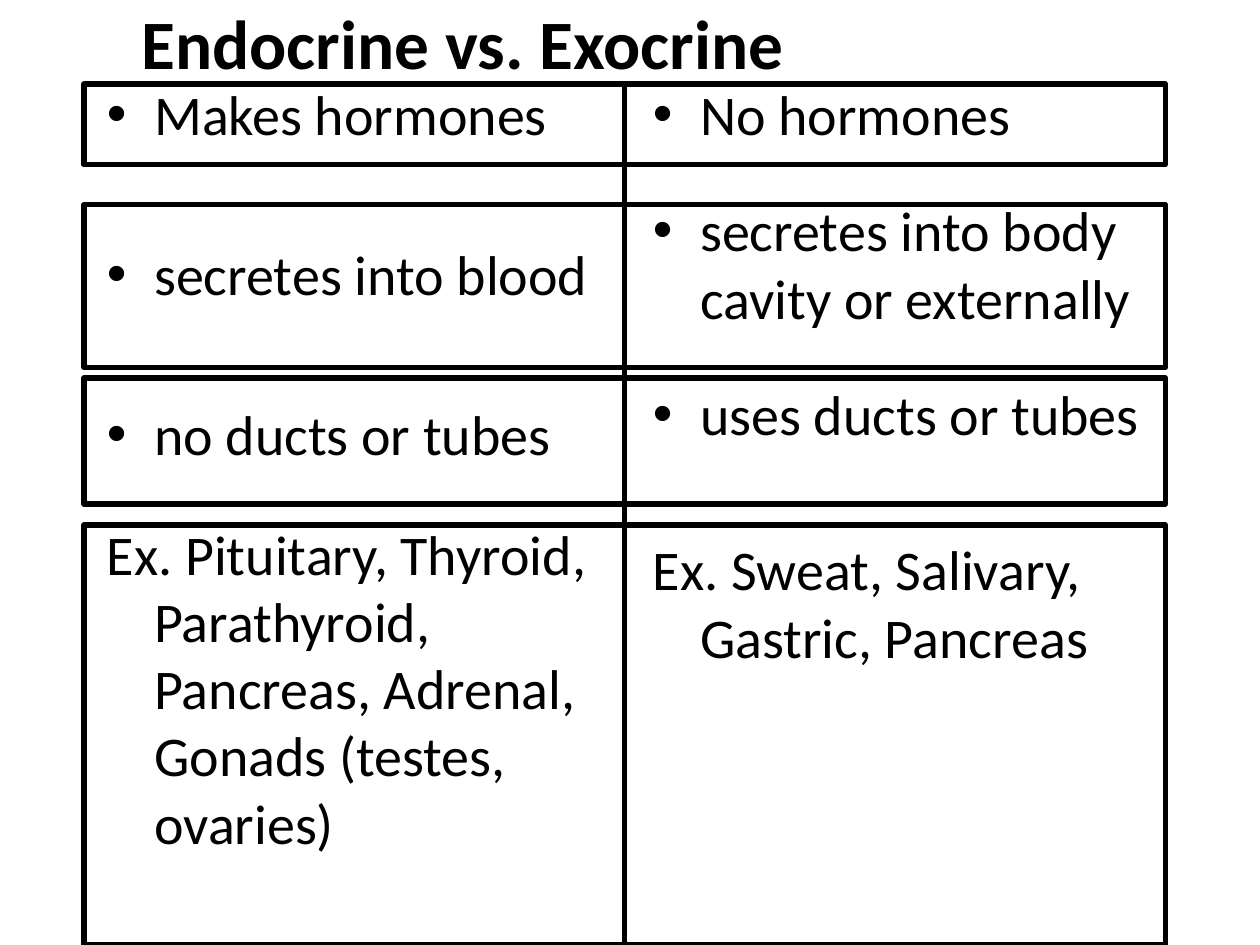
import pptx
import pptx.dml.color
import pptx.enum.shapes
import pptx.enum.text
import pptx.util
from lxml import etree

BLACK = pptx.dml.color.RGBColor(0, 0, 0)
WHITE = pptx.dml.color.RGBColor(255, 255, 255)
FONT = "Calibri"
COLS, ROWS = 120, 90
WIDE, HIGH = pptx.util.Inches(10), pptx.util.Inches(7.5)
Pt = pptx.util.Pt

# Each entry: text, bulleted, space before in points
ENDO = [
    ("Makes hormones", True, 0),
    ("secretes into blood", True, 53),
    ("no ducts or tubes", True, 53),
    ("Ex. Pituitary, Thyroid, Parathyroid, Pancreas, Adrenal, "
     "Gonads (testes, ovaries)", False, 30),
]
EXO = [
    ("No hormones", True, 0),
    ("secretes into body cavity or externally", True, 28),
    ("uses ducts or tubes", True, 28),
    ("Ex. Sweat, Salivary, Gastric, Pancreas", False, 50.5),
]
# Top and height of each row frame, in grid rows
FRAMES = [(8, 7.7), (19.5, 15.5), (36, 12), (50, 40)]
LEFT, SPAN, MID = 8, 103, 59.5


def across(cols):
    return round(WIDE * cols / COLS)


def down(rows):
    return round(HIGH * rows / ROWS)


def place(x, y, w, h):
    return across(x), down(y), across(w), down(h)


def add_text(para, text, size=32, bold=False, before=0):
    para.space_before = Pt(before)
    run = para.add_run()
    run.text = text
    font = run.font
    font.name, font.size, font.bold = FONT, Pt(size), bold
    font.color.rgb = BLACK


def hang(para, bullet):
    """Set a hanging indent, with a round bullet if asked."""
    props = para._p.get_or_add_pPr()
    props.set("marL", str(across(4.5)))
    props.set("indent", str(-across(4.5)))
    ns = pptx.oxml.ns.qn
    if bullet:
        etree.SubElement(props, ns("a:buFont"), typeface="Arial")
        etree.SubElement(props, ns("a:buChar"), char="•")
    else:
        etree.SubElement(props, ns("a:buNone"))


def add_box(slide, x, y, w, h):
    frame = slide.shapes.add_textbox(*place(x, y, w, h)).text_frame
    frame.word_wrap = True
    return frame


def add_title(slide, text):
    frame = add_box(slide, 5.2, 0, 102, 8)
    frame.vertical_anchor = pptx.enum.text.MSO_ANCHOR.MIDDLE
    frame.margin_left = across(8.3)
    add_text(frame.paragraphs[0], text, size=39.6, bold=True)


def add_list(slide, x, items):
    frame = add_box(slide, x, 7, 50, 83)
    for i, (text, bullet, gap) in enumerate(items):
        para = frame.add_paragraph() if i else frame.paragraphs[0]
        add_text(para, text, before=gap)
        hang(para, bullet)


def ink(line):
    line.color.rgb = BLACK
    line.width = Pt(3)


def add_frame(slide, top, high):
    kind = pptx.enum.shapes.MSO_SHAPE.RECTANGLE
    rect = slide.shapes.add_shape(kind, *place(LEFT, top, SPAN, high))
    rect.shadow.inherit = False
    rect.fill.background()
    ink(rect.line)


def add_rule(slide, x, top, end):
    kind = pptx.enum.shapes.MSO_CONNECTOR.STRAIGHT
    rule = slide.shapes.add_connector(
        kind, across(x), down(top), across(x), down(end))
    ink(rule.line)
    etree.SubElement(rule._element.spPr, pptx.oxml.ns.qn("a:effectLst"))


def main():
    deck = pptx.Presentation()
    deck.slide_width, deck.slide_height = WIDE, HIGH
    slide = deck.slides.add_slide(deck.slide_layouts[6])
    slide.background.fill.solid()
    slide.background.fill.fore_color.rgb = WHITE
    add_title(slide, "Endocrine vs. Exocrine")
    for x, items in ((9, ENDO), (61, EXO)):
        add_list(slide, x, items)
    for top, high in FRAMES:
        add_frame(slide, top, high)
    add_rule(slide, MID, FRAMES[0][0], ROWS)
    deck.save("out.pptx")


if __name__ == "__main__":
    main()
